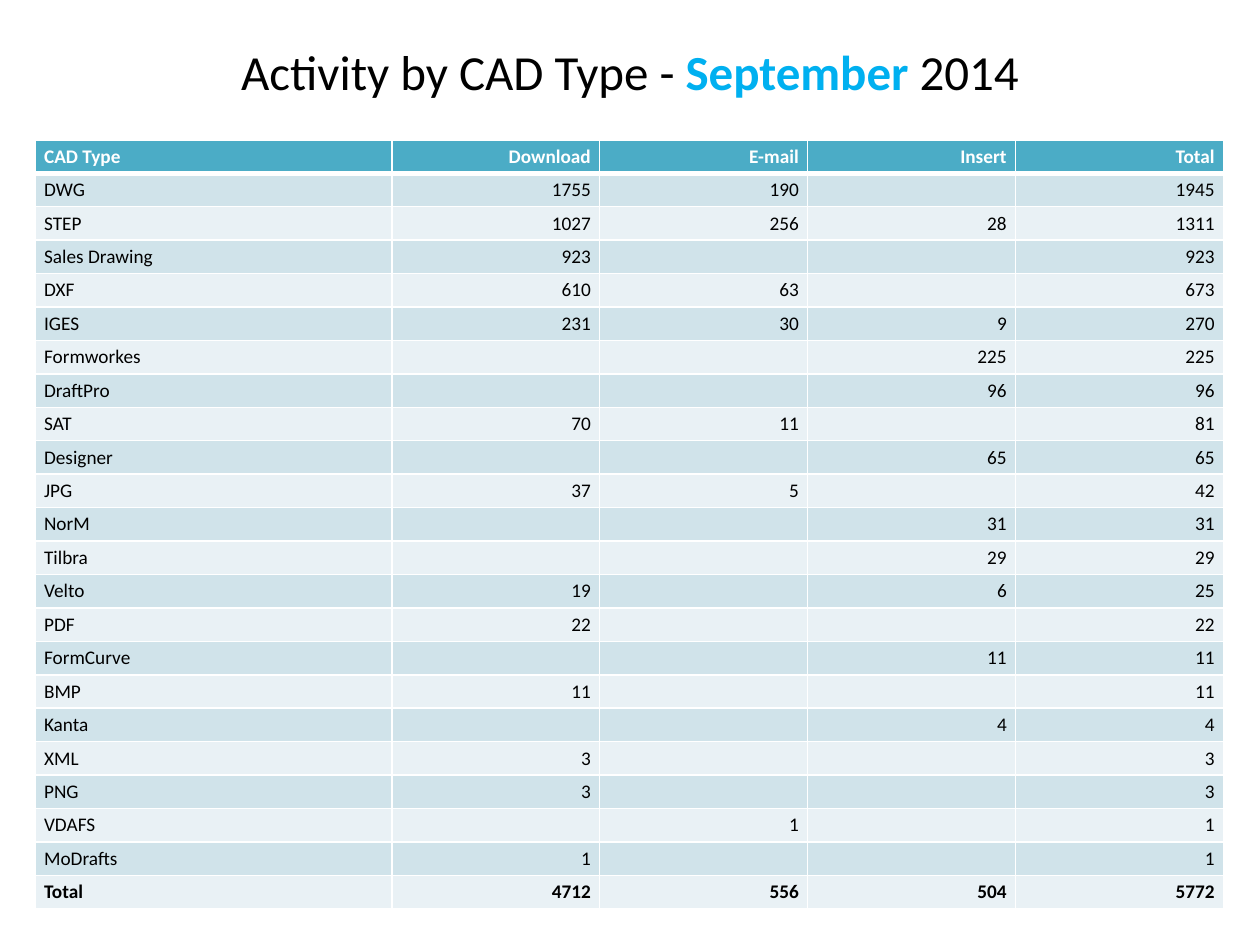
from dataclasses import dataclass

from lxml.etree import SubElement
from pptx import Presentation
from pptx.dml.color import RGBColor
from pptx.enum.text import MSO_ANCHOR, MSO_AUTO_SIZE, PP_ALIGN
from pptx.oxml.ns import qn
from pptx.util import Inches, Pt

FONT = "Calibri"
BLACK = RGBColor(0x00, 0x00, 0x00)
WHITE = RGBColor(0xFF, 0xFF, 0xFF)
BLUE = RGBColor(0x00, 0xB0, 0xF0)
TEAL = RGBColor(0x4B, 0xAC, 0xC6)
BANDS = (RGBColor(0xD0, 0xE3, 0xEA), RGBColor(0xE9, 0xF1, 0xF5))

LEFT, WIDTH = Inches(0.28), Inches(9.44)
TOP, HEIGHT = Inches(1.11), Inches(6.11)
COLS = (2.83, 1.65, 1.65, 1.65, 1.65)
HEADS = ("CAD Type", "Download", "E-mail", "Insert", "Total")


@dataclass
class Usage:
    name: str
    down: int = 0
    mail: int = 0
    insert: int = 0

    def texts(self) -> list[str]:
        """Cell texts with the row sum; zero counts stay blank."""
        counts = (self.down, self.mail, self.insert)
        return [self.name, *(str(n) if n else "" for n in (*counts, sum(counts)))]


@dataclass
class Look:
    fill: RGBColor
    color: RGBColor = BLACK
    bold: bool = False
    base: float = 1  # width of the bottom border in points


USAGES = [
    Usage("DWG", 1755, 190),
    Usage("STEP", 1027, 256, 28),
    Usage("Sales Drawing", 923),
    Usage("DXF", 610, 63),
    Usage("IGES", 231, 30, 9),
    Usage("Formworkes", insert=225),
    Usage("DraftPro", insert=96),
    Usage("SAT", 70, 11),
    Usage("Designer", insert=65),
    Usage("JPG", 37, 5),
    Usage("NorM", insert=31),
    Usage("Tilbra", insert=29),
    Usage("Velto", 19, insert=6),
    Usage("PDF", 22),
    Usage("FormCurve", insert=11),
    Usage("BMP", 11),
    Usage("Kanta", insert=4),
    Usage("XML", 3),
    Usage("PNG", 3),
    Usage("VDAFS", mail=1),
    Usage("MoDrafts", 1),
]


def add_run(para, text: str, size: float, color: RGBColor, bold: bool) -> None:
    run = para.add_run()
    run.text = text
    font = run.font
    font.name, font.size, font.bold = FONT, Pt(size), bold
    font.color.rgb = color


def add_edge(cell, side: str, width: float) -> None:
    line = SubElement(cell._tc.get_or_add_tcPr(), qn(f"a:ln{side}"), w=str(Pt(width)))
    fill = SubElement(line, qn("a:solidFill"))
    SubElement(fill, qn("a:srgbClr"), val=str(WHITE))


def fill_cell(cell, text: str, align: PP_ALIGN, look: Look) -> None:
    for side in "LRT":
        add_edge(cell, side, 1)
    add_edge(cell, "B", look.base)
    cell.fill.solid()
    cell.fill.fore_color.rgb = look.fill
    cell.margin_left = cell.margin_right = Inches(0.07)
    cell.margin_top = cell.margin_bottom = 0
    cell.vertical_anchor = MSO_ANCHOR.MIDDLE
    para = cell.text_frame.paragraphs[0]
    para.alignment = align
    if text:
        add_run(para, text, 11, look.color, look.bold)
    else:
        # Keeps the row from growing to the default text size
        SubElement(para._p, qn("a:endParaRPr"), sz="1100")


def add_title(slide) -> None:
    title = slide.shapes.title
    title.left, title.top = LEFT, Inches(0.28)
    title.width, title.height = WIDTH, Inches(0.57)
    frame = title.text_frame
    frame.word_wrap = True
    frame.auto_size = MSO_AUTO_SIZE.SHAPE_TO_FIT_TEXT
    frame.vertical_anchor = MSO_ANCHOR.MIDDLE
    para = frame.paragraphs[0]
    para.alignment = PP_ALIGN.CENTER
    add_run(para, "Activity by CAD Type - ", 28, BLACK, False)
    add_run(para, "September", 28, BLUE, True)
    add_run(para, " 2014", 28, BLACK, False)


def add_usage(slide) -> None:
    total = Usage(
        "Total",
        sum(u.down for u in USAGES),
        sum(u.mail for u in USAGES),
        sum(u.insert for u in USAGES),
    )
    rows = [HEADS, *(u.texts() for u in (*USAGES, total))]
    last = len(rows) - 1
    table = slide.shapes.add_table(
        len(rows), len(COLS), LEFT, TOP, WIDTH, HEIGHT
    ).table
    for col, width in zip(table.columns, COLS):
        col.width = Inches(width)
    for r, texts in enumerate(rows):
        table.rows[r].height = HEIGHT // len(rows)
        if r == 0:
            look = Look(TEAL, WHITE, True, 3)
        else:
            look = Look(BANDS[(r - 1) % 2], bold=r == last)
        for c, text in enumerate(texts):
            align = PP_ALIGN.RIGHT if c else PP_ALIGN.LEFT
            fill_cell(table.cell(r, c), text, align, look)


def main() -> None:
    deck = Presentation()
    deck.slide_width, deck.slide_height = Inches(10), Inches(7.5)
    slide = deck.slides.add_slide(deck.slide_layouts[5])
    add_title(slide)
    add_usage(slide)
    deck.save("out.pptx")


if __name__ == "__main__":
    main()
